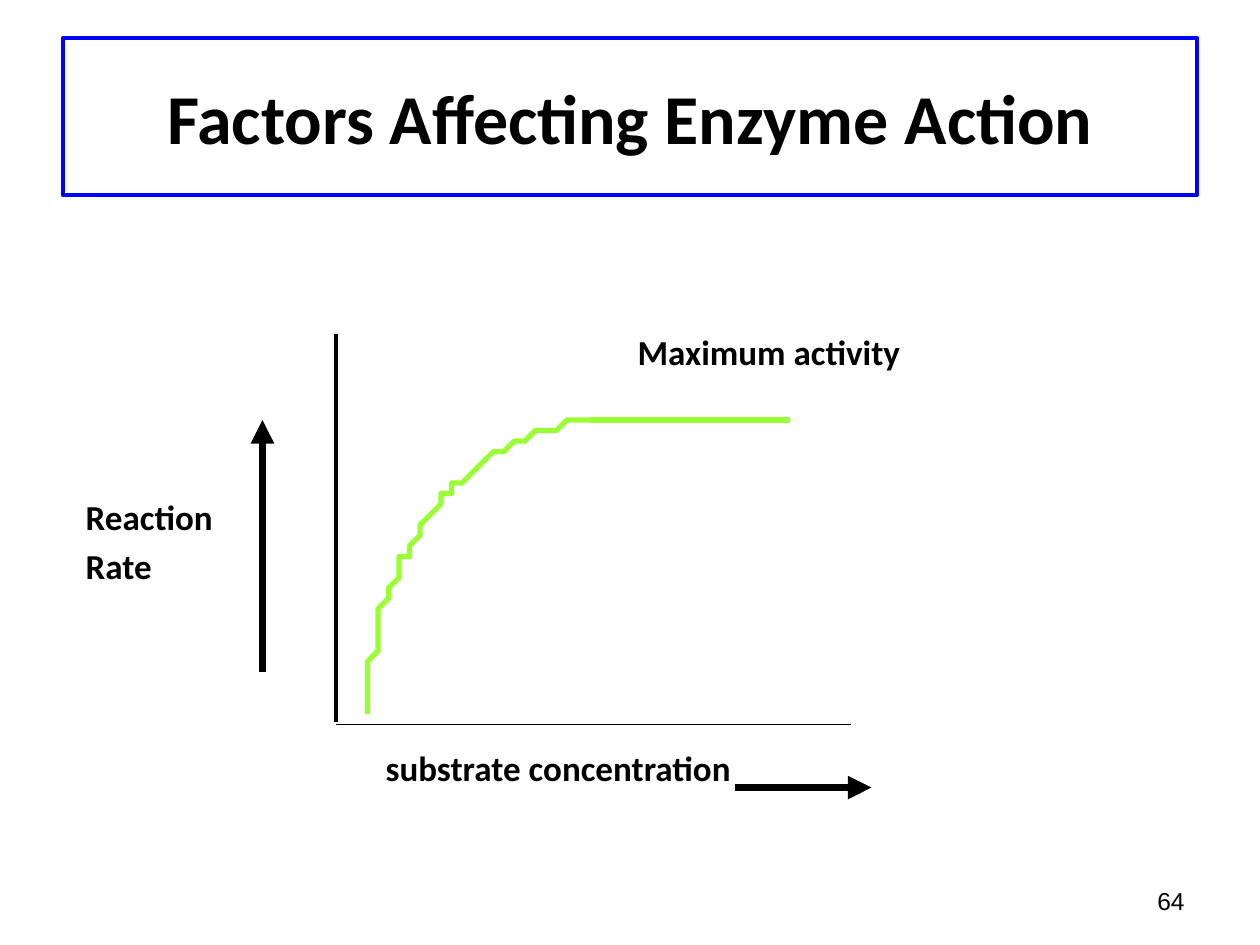
from lxml import etree
from pptx import Presentation
from pptx.dml.color import RGBColor
from pptx.enum.shapes import MSO_CONNECTOR
from pptx.enum.text import MSO_ANCHOR, MSO_AUTO_SIZE, PP_ALIGN
from pptx.oxml.ns import qn
from pptx.util import Inches, Pt

STRAIGHT = MSO_CONNECTOR.STRAIGHT
MIDDLE, TOP = MSO_ANCHOR.MIDDLE, MSO_ANCHOR.TOP
CENTER, LEFT, RIGHT = PP_ALIGN.CENTER, PP_ALIGN.LEFT, PP_ALIGN.RIGHT
COLORS = {"text": "000000", "frame": "0000FF", "axis": "000000", "curve": "99FF33"}
CELL = Inches(1) / 12  # the graph sits on a grid of 120 columns by 90 rows


def write(para, text, size, font="Calibri", bold=True, align=LEFT, before=0, indent=0):
    """Fill a paragraph; before is in points, indent in inches."""
    para.alignment = align
    para.space_before = Pt(before)
    properties = para._p.get_or_add_pPr()
    properties.set("marL", str(Inches(indent)))
    properties.set("indent", "0")
    etree.SubElement(properties, qn("a:buNone"))
    span = para.add_run()
    span.text = text
    span.font.name, span.font.size, span.font.bold = font, Pt(size), bold
    span.font.color.rgb = RGBColor.from_string(COLORS["text"])


def draw_line(start, end, color, width, arrow=False):
    """Join two (column, row) points of the grid."""
    ends = [round(value * CELL) for value in (*start, *end)]
    line = page.shapes.add_connector(STRAIGHT, *ends)
    line.line.color.rgb = RGBColor.from_string(COLORS[color])
    line.line.width = Pt(width)
    if arrow:
        etree.SubElement(line.line._get_or_add_ln(), qn("a:tailEnd"), type="triangle")
    etree.SubElement(line._element.spPr, qn("a:effectLst"))


deck = Presentation()
deck.slide_width, deck.slide_height = Inches(10), Inches(7.5)
page = deck.slides.add_slide(deck.slide_layouts[1])

# Title
title = page.shapes.title
title.left, title.top, title.width, title.height = map(Inches, (0.5, 0.3, 9, 1.25))
title.line.color.rgb = RGBColor.from_string(COLORS["frame"])
title.line.width = Pt(2.25)
title.text_frame.auto_size = MSO_AUTO_SIZE.NONE
title.text_frame.vertical_anchor = MIDDLE
write(title.text_frame.paragraphs[0], "Factors Affecting Enzyme Action", 40, align=CENTER)

# Graph labels: text, space before, indent
labels = [
    ("Maximum activity", 0, 4.38),
    ("Reaction", 70.5, 0),
    ("Rate", 4, 0),
    ("substrate concentration", 91.5, 2.38),
]
body = page.placeholders[1]
body.left, body.top, body.width, body.height = map(Inches, (0.58, 2.17, 8.83, 4.92))
frame = body.text_frame
frame.auto_size = MSO_AUTO_SIZE.NONE
frame.vertical_anchor = TOP
frame.margin_top = Inches(0.45)
for number, (text, before, indent) in enumerate(labels):
    para = frame.add_paragraph() if number else frame.paragraphs[0]
    write(para, text, 20, before=before, indent=indent)

# Slide number
box = page.shapes.add_textbox(*map(Inches, (7.17, 6.95, 2.33, 0.4)))
box.text_frame.word_wrap = True
box.text_frame.vertical_anchor = MIDDLE
write(box.text_frame.paragraphs[0], "64", 14, font="Arial", bold=False, align=RIGHT)

# Axes
draw_line((32, 31.8), (32, 68.8), "axis", 2.25)
draw_line((32, 69), (81, 69), "axis", 0.75)

# Rising curve, a cubic Bezier sampled in equal steps
controls = [(56.9, 40), (44.6, 40.8), (35, 53), (35, 68)]
STEPS = 48
points = []
for step in range(STEPS + 1):
    t = step / STEPS
    weights = ((1 - t) ** 3, 3 * t * (1 - t) ** 2, 3 * t**2 * (1 - t), t**3)
    points.append([sum(w * c[axis] for w, c in zip(weights, controls)) for axis in (0, 1)])
builder = page.shapes.build_freeform(*points[0], scale=CELL)
builder.add_line_segments(points[1:], close=False)
curve = builder.convert_to_shape()
curve.shadow.inherit = False
curve.fill.background()
curve.line.color.rgb = RGBColor.from_string(COLORS["curve"])
curve.line.width = Pt(3)

# Direction arrows and plateau
draw_line((25, 64), (25, 40), "axis", 4.5, arrow=True)
draw_line((70, 75), (83, 75), "axis", 4.5, arrow=True)
draw_line((56.2, 40), (75.2, 40), "curve", 3)

deck.save("out.pptx")
